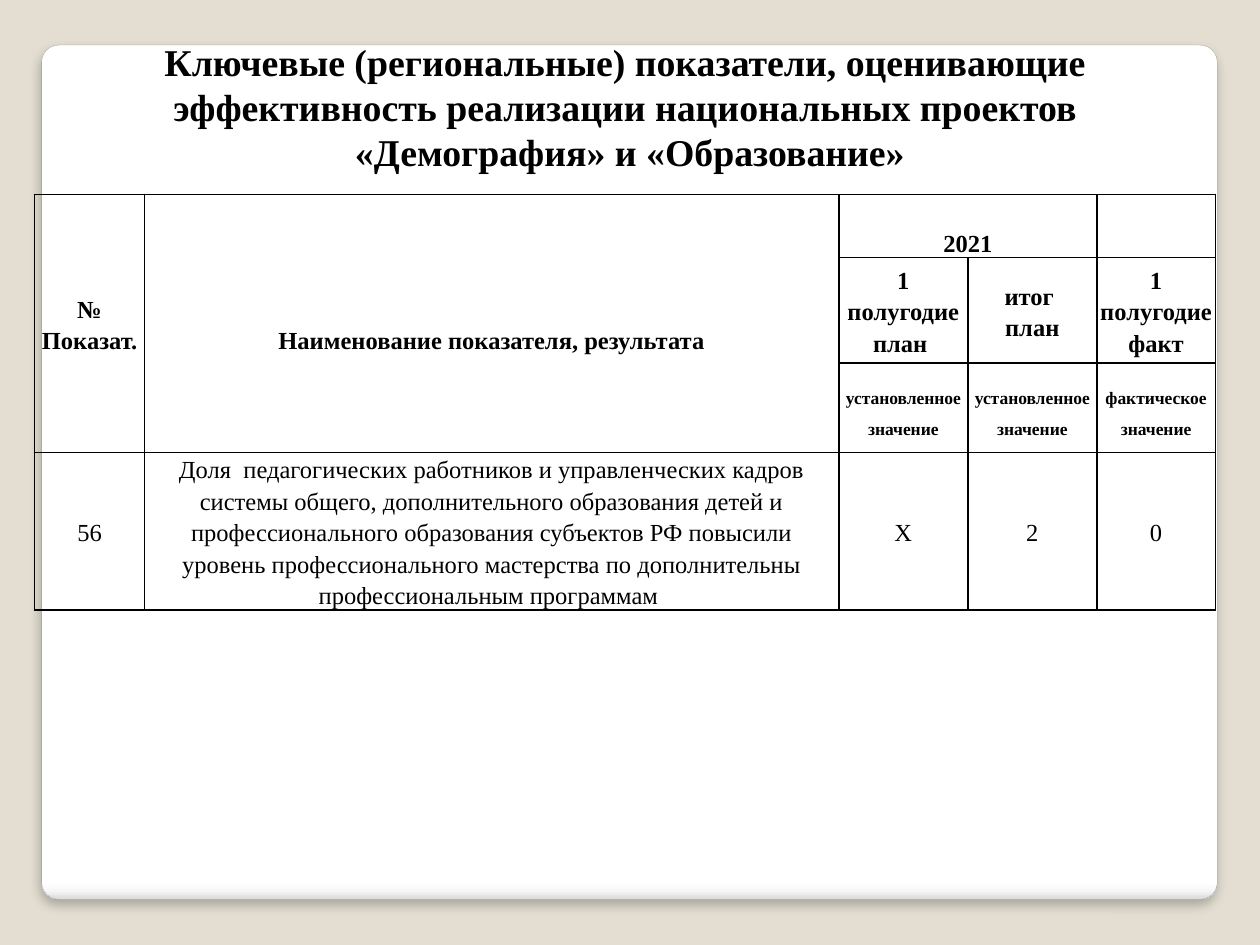
from lxml import etree
from pptx import Presentation
from pptx import util as u
from pptx.dml.color import RGBColor
from pptx.enum import shapes, text
from pptx.oxml import parse_xml
from pptx.oxml.ns import nsdecls, qn

FONT = "Times New Roman"
BLACK = "000000"
COL_WIDTHS = [2.21, 14, 2.6, 2.6, 2.39]
ROW_HEIGHTS = [1.27, 2.13, 1.8, 3.18]
LINE = u.Pt(18)

TITLE = ("Ключевые (региональные) показатели, оценивающие \v"
         "эффективность реализации национальных проектов \v"
         "«Демография» и «Образование»")
RESULT = ("Доля  педагогических работников и управленческих кадров системы общего, "
          "дополнительного образования детей и профессионального образования "
          "субъектов РФ повысили уровень профессионального мастерства по "
          "дополнительны профессиональным программам ")
ROWS = [
    ["№\nПоказат.", "Наименование показателя, результата", "2021", "", ""],
    ["", "", "1 полугодие план ", "итог \nплан", "1 полугодие факт"],
    ["", "", "установленное значение", "установленное значение", "фактическое значение"],
    ["56", RESULT, "X", "2", "0"],
]


def rgb(value):
    return RGBColor.from_string(value)


def format_text(tf, size, bold, spacing):
    for p in tf.paragraphs:
        p.alignment = text.PP_ALIGN.CENTER
        p.line_spacing = spacing
        p.font.size = u.Pt(size)
        for r in p.runs:
            r.font.name = FONT
            r.font.size = u.Pt(size)
            r.font.bold = bold
            r.font.color.rgb = rgb(BLACK)


def add_panel(slide):
    sp = slide.shapes.add_shape(shapes.MSO_SHAPE.ROUNDED_RECTANGLE,
                                u.Cm(0.84), u.Cm(0.91), u.Cm(23.7), u.Cm(17.22))
    sp.adjustments[0] = 0.02
    sp.line.color.rgb = rgb("A4A4A4")
    sp.line.width = u.Pt(0.16)
    # White fill that darkens at the bottom edge
    sp.fill.gradient()
    grad = sp.fill._xPr.find(qn("a:gradFill"))
    stops = grad.find(qn("a:gsLst"))
    for stop in list(stops):
        stops.remove(stop)
    for pos, color in [(0, "FFFFFF"), (98, "FFFFFF"), (99, "F7F7F7"), (100, "DADADA")]:
        gs = etree.SubElement(stops, qn("a:gs"), pos=str(pos * 1000))
        etree.SubElement(gs, qn("a:srgbClr"), val=color)
    grad.find(qn("a:lin")).set("ang", "5400000")
    # Soft shadow below
    sp.shadow.inherit = False
    effects = sp._element.spPr.find(qn("a:effectLst"))
    effects.append(parse_xml(
        f'<a:outerShdw {nsdecls("a")} blurRad="{u.Pt(6)}" dist="{u.Pt(4)}" dir="5400000">'
        f'<a:srgbClr val="{BLACK}"><a:alpha val="25000"/></a:srgbClr></a:outerShdw>'))


def add_title(slide):
    tf = slide.shapes.add_textbox(u.Cm(0), u.Cm(0.79), u.Cm(25.4), u.Cm(2.8)).text_frame
    tf.word_wrap = True
    tf.margin_top = tf.margin_bottom = 0
    tf.text = TITLE
    format_text(tf, 21.6, True, u.Pt(25.7))


def set_borders(cell):
    tc_pr = cell._tc.get_or_add_tcPr()
    for side in ("lnL", "lnR", "lnT", "lnB"):
        tc_pr.append(parse_xml(
            f'<a:{side} {nsdecls("a")} w="{u.Pt(1)}"><a:solidFill>'
            f'<a:srgbClr val="{BLACK}"/></a:solidFill></a:{side}>'))


def add_indicator_table(slide):
    table = slide.shapes.add_table(len(ROWS), len(COL_WIDTHS), u.Cm(0.7), u.Cm(3.92),
                                   u.Cm(sum(COL_WIDTHS)), u.Cm(sum(ROW_HEIGHTS))).table
    table.first_row = table.horz_banding = False
    for column, width in zip(table.columns, COL_WIDTHS):
        column.width = u.Cm(width)
    for row, height in zip(table.rows, ROW_HEIGHTS):
        row.height = u.Cm(height)

    for i, row in enumerate(ROWS):
        for j, value in enumerate(row):
            cell = table.cell(i, j)
            cell.margin_left = cell.margin_right = u.Cm(0.05)
            cell.margin_top = cell.margin_bottom = 0
            cell.vertical_anchor = text.MSO_ANCHOR.MIDDLE
            cell.text = value
            format_text(cell.text_frame, 10 if i == 2 else 14, i < 3, LINE)
            set_borders(cell)
            cell.fill.background()

    # Headings that sit one line lower
    for j in (1, 2):
        table.cell(0, j).margin_top = LINE
    # Merged headings
    for j in (0, 1):
        table.cell(0, j).merge(table.cell(2, j))
    table.cell(0, 2).merge(table.cell(0, 3))


def main():
    prs = Presentation()
    prs.slide_width, prs.slide_height = u.Cm(25.4), u.Cm(19.05)
    slide = prs.slides.add_slide(prs.slide_layouts[6])
    slide.background.fill.solid()
    slide.background.fill.fore_color.rgb = rgb("E3DED1")
    add_panel(slide)
    add_title(slide)
    add_indicator_table(slide)
    prs.save("out.pptx")


if __name__ == "__main__":
    main()
